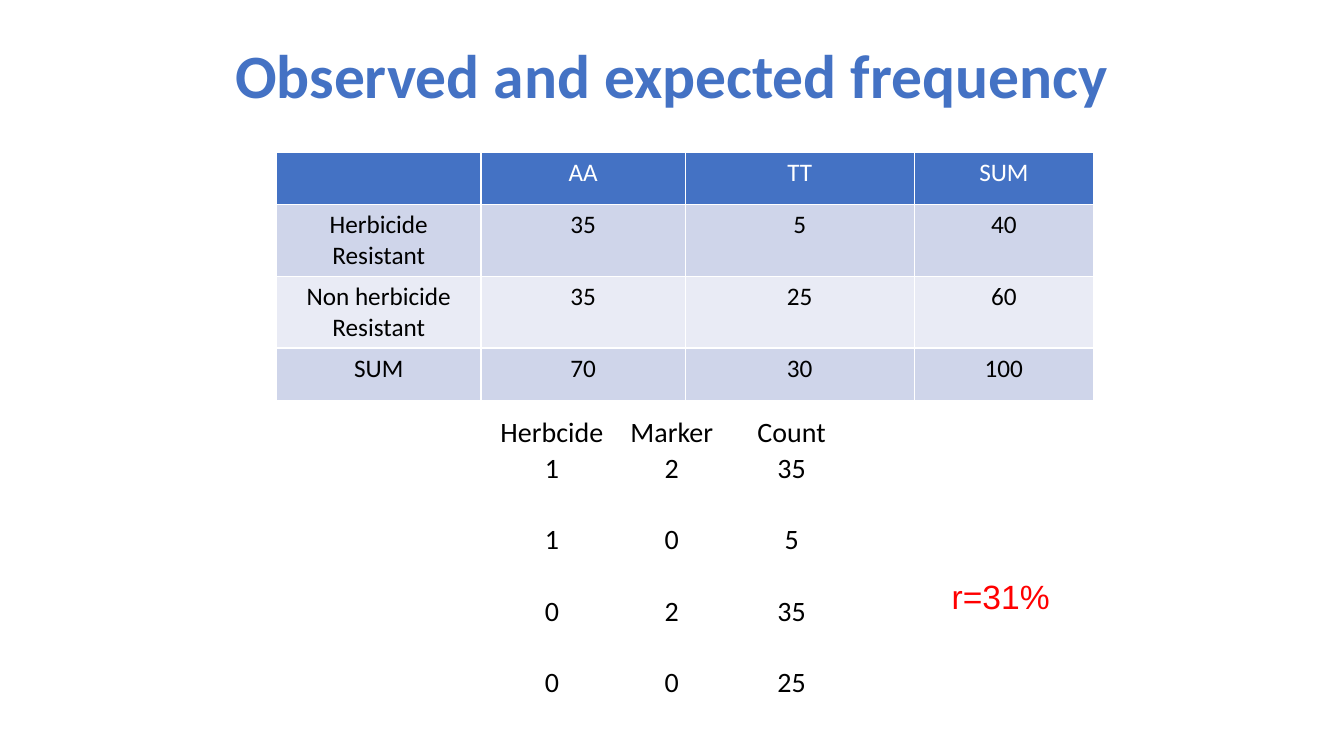
from dataclasses import dataclass

from lxml.etree import SubElement
from pptx import Presentation
from pptx.dml.color import RGBColor as RGB
from pptx.enum.shapes import MSO_SHAPE as Shape
from pptx.enum.text import MSO_ANCHOR as Anchor, MSO_AUTO_SIZE as AutoSize, PP_ALIGN as Align
from pptx.oxml.ns import qn
from pptx.util import Cm, Pt


@dataclass(frozen=True)
class Theme:
    font: str = "Calibri"
    result_font: str = "Arial"
    blue: RGB = RGB(0x44, 0x72, 0xC4)
    bands: tuple = (RGB(0xCF, 0xD5, 0xEA), RGB(0xE9, 0xEB, 0xF5))
    white: RGB = RGB(0xFF, 0xFF, 0xFF)
    black: RGB = RGB(0, 0, 0)
    red: RGB = RGB(0xFF, 0, 0)
    title_size: Pt = Pt(44)
    frequency_size: Pt = Pt(18)
    count_size: Pt = Pt(20)
    result_size: Pt = Pt(24)


THEME = Theme()

FREQUENCIES = [
    ("", "AA", "TT", "SUM"),
    ("Herbicide Resistant", "35", "5", "40"),
    ("Non herbicide\nResistant", "35", "25", "60"),
    ("SUM", "70", "30", "100"),
]
COUNT_HEADER = ("Herbcide", "Marker", "Count")
COUNTS = [("1", "2", "35"), ("1", "0", "5"), ("0", "2", "35"), ("0", "0", "25")]


def write(tf, text, size, color, bold=False, font=THEME.font):
    tf.text = text
    for p in tf.paragraphs:
        p.alignment = Align.CENTER
        p.font.name = font
        p.font.size = size
        p.font.bold = bold
        p.font.color.rgb = color


def add_title(s, text):
    title = s.shapes.title
    title.left, title.top, title.width, title.height = Cm(2.33), Cm(0.15), Cm(29.21), Cm(3.68)
    tf = title.text_frame
    tf.vertical_anchor = Anchor.MIDDLE
    write(tf, text, THEME.title_size, THEME.blue, bold=True)
    tf.paragraphs[0].line_spacing = 0.9


def add_grid(s, left, top, widths, heights):
    table = s.shapes.add_table(
        len(heights), len(widths), left, top, sum(widths), sum(heights)
    ).table
    for column, width in zip(table.columns, widths):
        column.width = width
    for row, height in zip(table.rows, heights):
        row.height = height
    return table


def add_frequency_table(s):
    widths = [Cm(w) for w in (5.15, 5.15, 5.77, 4.52)]
    heights = [Cm(h) for h in (1.32, 1.81, 1.81, 1.32)]
    table = add_grid(s, Cm(6.97), Cm(3.83), widths, heights)
    for i, values in enumerate(FREQUENCIES):
        fill = THEME.bands[(i - 1) % 2] if i else THEME.blue
        color = THEME.black if i else THEME.white
        for cell, value in zip(table.rows[i].cells, values):
            cell.fill.solid()
            cell.fill.fore_color.rgb = fill
            write(cell.text_frame, value, THEME.frequency_size, color)


def add_count_table(s):
    rows = [COUNT_HEADER, COUNTS[0]]
    for values in COUNTS[1:]:
        rows += [("", "", ""), values]
    table = add_grid(s, Cm(12.4), Cm(10.44), [Cm(3.02)] * 3, [Cm(0.9)] * len(rows))
    table.first_row = table.horz_banding = False
    for row, values in zip(table.rows, rows):
        for cell, value in zip(row.cells, values):
            cell.fill.background()
            cell.vertical_anchor = Anchor.BOTTOM
            cell.margin_left = cell.margin_right = cell.margin_top = Cm(0.03)
            cell.margin_bottom = 0
            write(cell.text_frame, value, THEME.count_size, THEME.black)


def add_result(s, text):
    sp = s.shapes.add_shape(Shape.RECTANGLE, Cm(20.8), Cm(14.4), Cm(8.84), Cm(1.27))
    sp.shadow.inherit = False
    sp.line.fill.background()
    sp.fill.solid()
    sp.fill.fore_color.rgb = THEME.white
    color = sp.fill._xPr.find(qn("a:solidFill"))[0]
    SubElement(color, qn("a:alpha"), val="95000")
    tf = sp.text_frame
    tf.word_wrap = True
    tf.auto_size = AutoSize.SHAPE_TO_FIT_TEXT
    tf.vertical_anchor = Anchor.TOP
    write(tf, text, THEME.result_size, THEME.red, font=THEME.result_font)


def main():
    prs = Presentation()
    prs.slide_width, prs.slide_height = Cm(33.87), Cm(19.05)
    s = prs.slides.add_slide(prs.slide_layouts[5])
    add_title(s, "Observed and expected frequency")
    add_frequency_table(s)
    add_count_table(s)
    add_result(s, "r=31%")
    prs.save("out.pptx")


if __name__ == "__main__":
    main()
